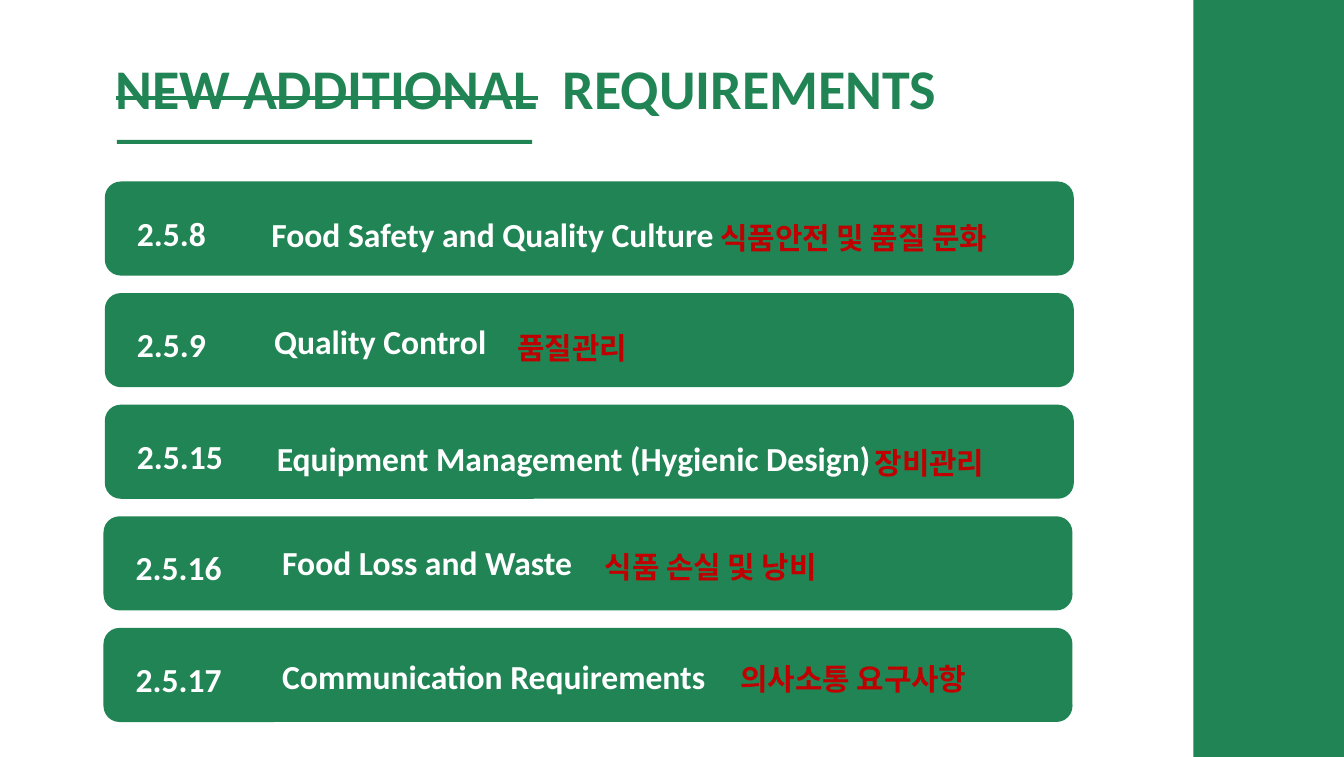
"""Build a slide that lists five food safety requirements in green bars."""
from pptx import Presentation
from pptx.dml.color import RGBColor
from pptx.enum.shapes import MSO_SHAPE
from pptx.enum.text import MSO_ANCHOR, MSO_AUTO_SIZE, PP_ALIGN
from pptx.util import Inches, Pt

RECT = MSO_SHAPE.RECTANGLE
ROUND = MSO_SHAPE.ROUNDED_RECTANGLE
TOP = MSO_ANCHOR.TOP
FIXED = MSO_AUTO_SIZE.NONE
LEFT = PP_ALIGN.LEFT

COLORS = {"green": "208454", "white": "FFFFFF", "red": "C00000"}
FIRST, PITCH = 1.35, 0.83
ROWS = [
    (0.78, "2.5.8", "Food Safety and Quality Culture", (2.01, 1.57),
     "식품안전 및 품질 문화", (5.35, 1.61)),
    (0.78, "2.5.9", "Quality Control", (2.03, 2.37),
     "품질관리", (3.84, 2.43)),
    (0.78, "2.5.15", "Equipment Management (Hygienic Design)", (2.05, 3.24),
     "장비관리", (6.5, 3.29)),
    (0.77, "2.5.16", "Food Loss and Waste", (2.09, 4.01),
     "식품 손실 및 낭비", (4.49, 4.06)),
    (0.77, "2.5.17", "Communication Requirements", (2.09, 4.86),
     "의사소통 요구사항", (5.5, 4.89)),
]


def add_block(slide, kind, left, top, width, height):
    shape = slide.shapes.add_shape(
        kind, Inches(left), Inches(top), Inches(width), Inches(height))
    shape.shadow.inherit = False
    shape.fill.solid()
    shape.fill.fore_color.rgb = RGBColor.from_string(COLORS["green"])
    shape.line.fill.background()
    return shape


def set_frame(frame, left, top):
    frame.margin_left, frame.margin_top = Inches(left), Inches(top)
    frame.margin_right = frame.margin_bottom = 0
    frame.vertical_anchor = TOP
    frame.auto_size = FIXED
    frame.word_wrap = True


def set_font(para, name, size, color):
    para.alignment = LEFT
    para.space_before = Pt(1)
    font = para.font
    font.name, font.size, font.bold = name, Pt(size), True
    font.color.rgb = RGBColor.from_string(COLORS[color])


def add_text(slide, text, left, top, width, name, size, color):
    box = slide.shapes.add_textbox(
        Inches(left), Inches(top), Inches(width), Inches(0.32))
    set_frame(box.text_frame, 0.01, 0.02)
    para = box.text_frame.paragraphs[0]
    para.text = text
    set_font(para, name, size, color)


def add_title(slide):
    title = slide.shapes.title
    title.left, title.top = Inches(0.55), Inches(0.28)
    title.width, title.height = Inches(8.9), Inches(0.63)
    set_frame(title.text_frame, 0.31, 0.12)
    para = title.text_frame.paragraphs[0]
    struck = para.add_run()
    struck.text = "NEW ADDITIONAL"
    struck.font._element.set("strike", "sngStrike")
    para.add_run().text = "  REQUIREMENTS"
    set_font(para, "Calibri", 30, "green")


def add_row(slide, top, left, code, name, spot, korean, place):
    bar = add_block(slide, ROUND, left, top, 7.21, 0.7)
    bar.adjustments[0] = 0.17
    add_text(slide, code, left + 0.23, top + 0.21, 0.9, "Calibri", 18, "white")
    add_text(slide, name, *spot, 4.74, "Calibri", 18, "white")
    add_text(slide, korean, *place, 2.36, "Arial", 16, "red")


def main():
    deck = Presentation()
    deck.slide_width, deck.slide_height = Inches(10), Inches(5.63)
    slide = deck.slides.add_slide(deck.slide_layouts[5])
    add_block(slide, RECT, 8.88, 0, 1.12, 5.63)
    add_block(slide, RECT, 0.87, 1.04, 3.09, 0.03)
    add_title(slide)
    for index, row in enumerate(ROWS):
        add_row(slide, FIRST + index * PITCH, *row)
    deck.save("out.pptx")


if __name__ == "__main__":
    main()
